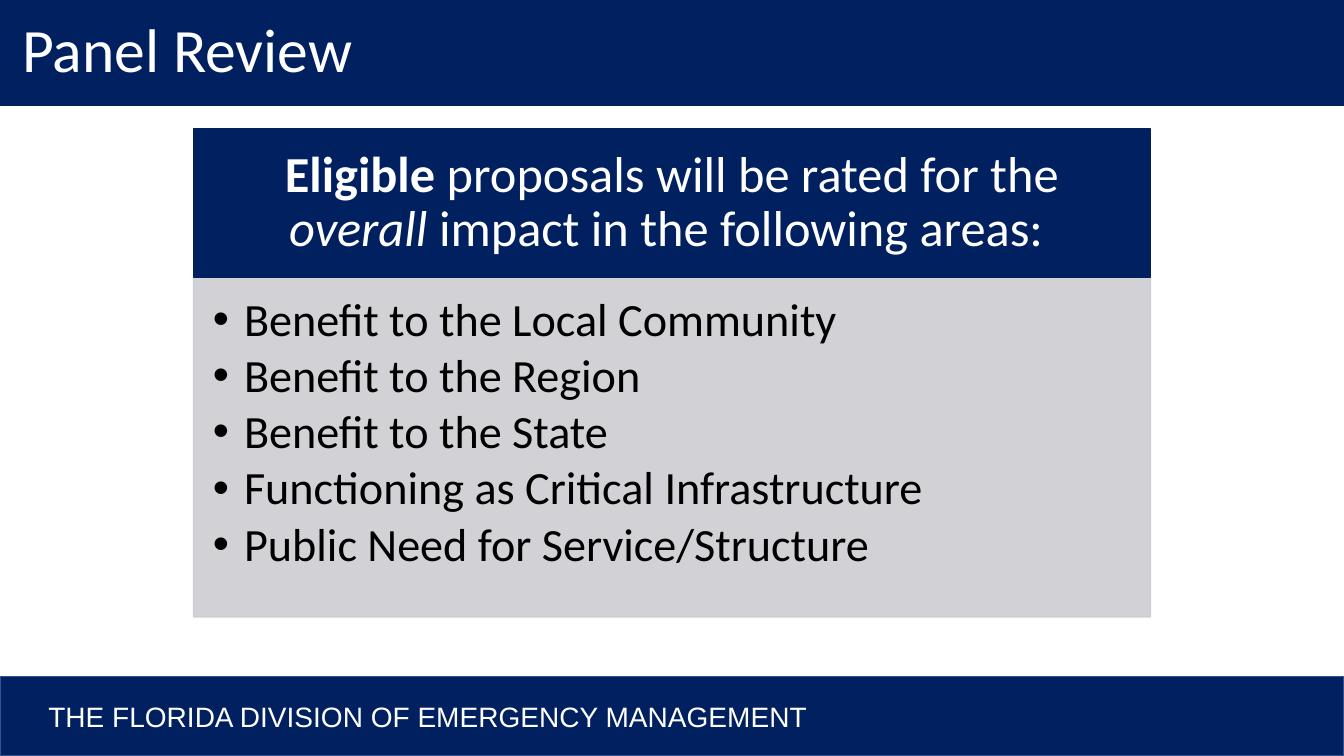
"""Build the Panel Review slide."""
from lxml import etree
from pptx import Presentation
from pptx import util as u
from pptx.dml.color import RGBColor
from pptx.enum import shapes, text
from pptx.oxml.ns import qn

COLORS = {"navy": "002060", "edge": "325491", "gray": "CCCDD2",
          "white": "FFFFFF", "black": "000000"}
AREAS = ["Benefit to the Local Community", "Benefit to the Region",
         "Benefit to the State", "Functioning as Critical Infrastructure",
         "Public Need for Service/Structure"]
HEADING = [("Eligible", True, False),
           (" proposals will be rated for the ", False, False),
           ("overall", False, True),
           (" impact in the following areas: ", False, False)]


def color(name):
    return RGBColor.from_string(COLORS[name])


def place(box, left, top, width, height):
    box.left, box.top = u.Inches(left), u.Inches(top)
    box.width, box.height = u.Inches(width), u.Inches(height)


def paint(box, fill, line=None):
    box.fill.solid()
    box.fill.fore_color.rgb = color(fill)
    if line:
        box.line.color.rgb = color(line)
        box.line.width = u.Pt(1)
    else:
        box.line.fill.background()


def make_translucent(box, percent):
    for tint in box._element.spPr.iter(qn("a:srgbClr")):
        etree.SubElement(tint, qn("a:alpha"), val=str(percent * 1000))


def set_frame(box, insets, anchor=text.MSO_ANCHOR.MIDDLE):
    frame = box.text_frame
    frame.word_wrap = True
    frame.auto_size = text.MSO_AUTO_SIZE.NONE
    frame.vertical_anchor = anchor
    (frame.margin_left, frame.margin_top,
     frame.margin_right, frame.margin_bottom) = map(u.Inches, insets)
    return frame


def style_paragraph(para, size, name, font="Calibri", spacing=0.9, after=0,
                    align=text.PP_ALIGN.LEFT):
    para.alignment = align
    para.line_spacing = spacing
    para.space_before, para.space_after = u.Pt(0), u.Pt(after)
    for span in para.runs:
        span.font.size = u.Pt(size)
        span.font.name = font
        span.font.color.rgb = color(name)


def add_bullet(para, indent):
    props = para._p.get_or_add_pPr()
    props.set("marL", str(u.Inches(indent)))
    props.set("indent", str(-u.Inches(indent)))
    etree.SubElement(props, qn("a:buFont"), typeface="Arial")
    etree.SubElement(props, qn("a:buChar"), char="•")


def add_panel(slide, bounds, fill, line):
    box = slide.shapes.add_shape(shapes.MSO_SHAPE.RECTANGLE,
                                 *map(u.Inches, bounds))
    box.shadow.inherit = False
    paint(box, fill, line)
    return box


def add_footer(slide):
    box = add_panel(slide, (0, 6.71, 13.33, 0.79), "navy", "edge")
    frame = set_frame(box, (0.48, 0.05, 0.1, 0.05))
    frame.text = "THE FLORIDA DIVISION OF EMERGENCY MANAGEMENT"
    style_paragraph(frame.paragraphs[0], 20, "white", "Arial", 1.0)


def fill_title(box):
    place(box, 0, 0, 13.33, 1.05)
    paint(box, "navy")
    frame = set_frame(box, (0.22, 0.05, 0.1, 0.05))
    frame.text = "Panel Review"
    style_paragraph(frame.paragraphs[0], 44, "white")


def add_heading(slide):
    box = add_panel(slide, (1.92, 1.28, 9.49, 1.47), "navy", "navy")
    para = set_frame(box, (0.28, 0.16, 0.28, 0.16)).paragraphs[0]
    for words, bold, italic in HEADING:
        span = para.add_run()
        span.text = words
        span.font.bold, span.font.italic = bold, italic
    style_paragraph(para, 36, "white", align=text.PP_ALIGN.CENTER)


def fill_list(box):
    place(box, 1.92, 2.75, 9.49, 3.37)
    paint(box, "gray", "gray")
    make_translucent(box, 90)
    frame = set_frame(box, (0.19, 0.19, 0.26, 0.29), text.MSO_ANCHOR.TOP)
    frame.text = "\n".join(AREAS)
    for para in frame.paragraphs:
        add_bullet(para, 0.31)
        style_paragraph(para, 33, "black", after=4.5)


def main():
    deck = Presentation()
    deck.slide_width, deck.slide_height = u.Inches(13.33), u.Inches(7.5)
    slide = deck.slides.add_slide(deck.slide_layouts[1])
    add_footer(slide)
    fill_title(slide.shapes.title)
    add_heading(slide)
    fill_list(slide.placeholders[1])
    deck.save("out.pptx")


if __name__ == "__main__":
    main()
